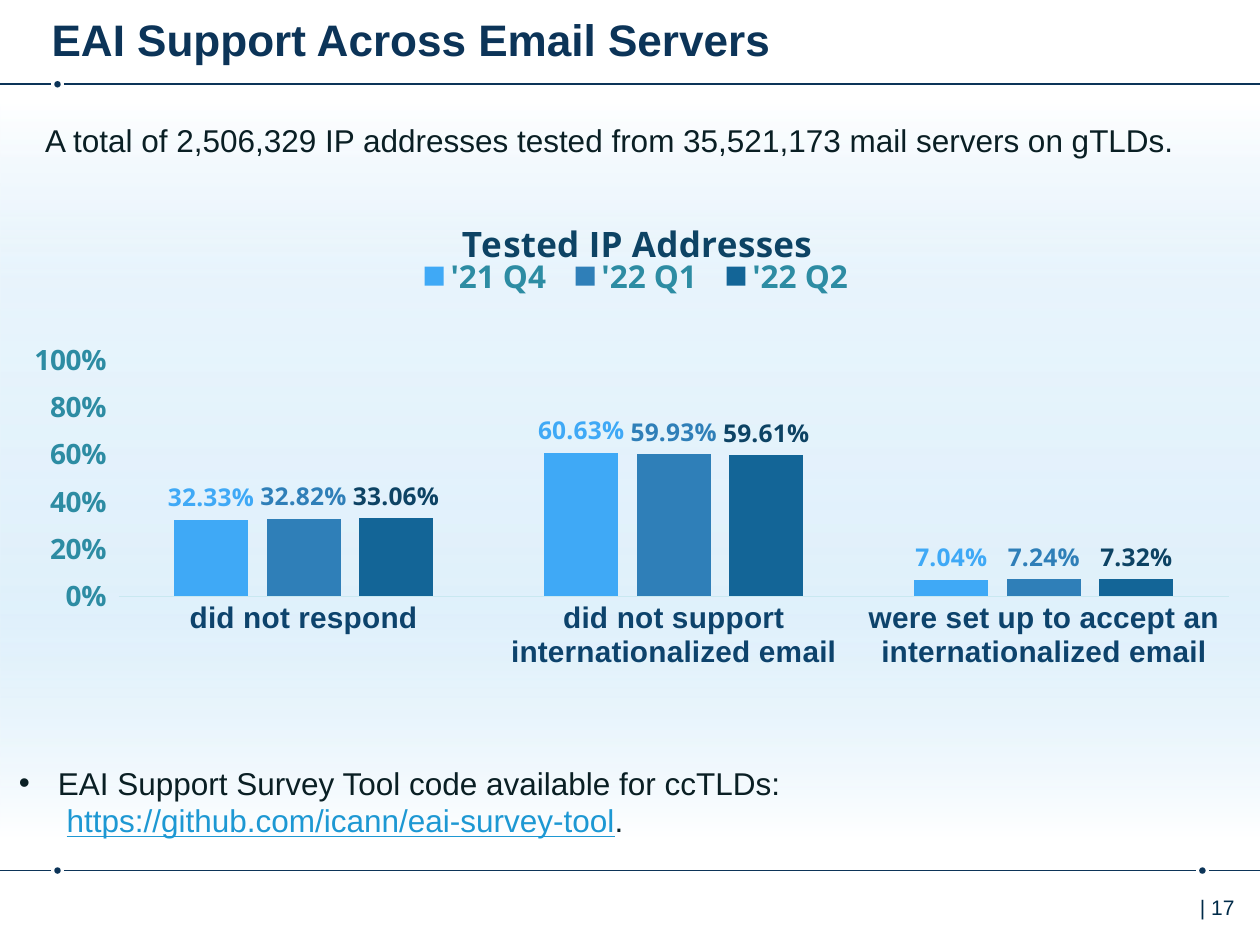
from lxml.etree import SubElement
from pptx import Presentation
from pptx.chart.data import CategoryChartData
from pptx.dml.color import RGBColor
from pptx.enum.chart import XL_CHART_TYPE as ChartType, XL_LABEL_POSITION as LabelPosition
from pptx.enum.chart import XL_LEGEND_POSITION as LegendPosition, XL_TICK_MARK as TickMark
from pptx.enum.shapes import MSO_CONNECTOR as Connector, MSO_SHAPE as Shape
from pptx.oxml import parse_xml
from pptx.oxml.ns import nsdecls, qn
from pptx.util import Cm, Pt

NAVY, INK, TITLE_BLUE, TEAL, LINK = "0C3458", "0A1F24", "0D4364", "2D8CA3", "1D98D3"
PAGE_WIDTH, PAGE_HEIGHT = 25.4, 19.05


def color(value):
    return RGBColor.from_string(value)


def set_font(font, size, value, bold=False, name="Arial"):
    font.name, font.size, font.bold = name, Pt(size), bold
    font.color.rgb = color(value)


def set_layout(element, **values):
    old = element.find(qn("c:layout"))
    if old is not None:
        element.remove(old)
    items = "".join(f'<c:{key} val="{value}"/>' for key, value in values.items())
    layout = parse_xml(f'<c:layout {nsdecls("c")}><c:manualLayout>{items}</c:manualLayout></c:layout>')
    anchor = {"title": "c:tx", "legend": "c:legendPos"}.get(element.tag.split("}")[1])
    if anchor:
        element.find(qn(anchor)).addnext(layout)
    else:
        element.insert(0, layout)


class SlideBuilder:
    """Draws styled elements on the current slide."""

    def __init__(self, slide):
        self.slide = slide
        self.shapes = slide.shapes

    def shape(self, kind, left, top, width, height, fill=None):
        shape = self.shapes.add_shape(kind, Cm(left), Cm(top), Cm(width), Cm(height))
        shape.shadow.inherit = False
        shape.line.fill.background()
        if fill:
            shape.fill.solid()
            shape.fill.fore_color.rgb = color(fill)
        return shape

    def gradient_panel(self, left, top, width, height, stops):
        shape = self.shape(Shape.RECTANGLE, left, top, width, height)
        items = "".join(
            f'<a:gs pos="{position * 1000}"><a:srgbClr val="{value}">'
            f'<a:alpha val="{alpha * 1000}"/></a:srgbClr></a:gs>'
            for position, value, alpha in stops)
        gradient = parse_xml(f'<a:gradFill {nsdecls("a")} rotWithShape="1"><a:gsLst>{items}</a:gsLst>'
                             '<a:lin ang="5400000" scaled="0"/></a:gradFill>')
        shape._element.spPr.find(qn("a:prstGeom")).addnext(gradient)

    def line(self, start, end, y):
        line = self.shapes.add_connector(Connector.STRAIGHT, Cm(start), Cm(y), Cm(end), Cm(y))
        line.line.color.rgb = color(NAVY)
        line.line.width = Pt(1)
        SubElement(line._element.spPr, qn("a:effectLst"))

    def dotted_rule(self, y, dots, size=0.13, gap=0.13):
        start = 0
        for dot in dots:
            self.line(start, dot - gap, y)
            self.shape(Shape.OVAL, dot - size / 2, y - size / 2, size, size, NAVY)
            start = dot + gap
        self.line(start, PAGE_WIDTH, y)

    def text(self, left, top, width, height, runs, size, bold=False, inset=0.25, bullet=None):
        frame = self.shapes.add_textbox(Cm(left), Cm(top), Cm(width), Cm(height)).text_frame
        frame.word_wrap = True
        frame.margin_left = frame.margin_right = Cm(inset)
        paragraph = frame.paragraphs[0]
        if bullet:
            properties = paragraph._p.get_or_add_pPr()
            properties.set("marL", str(Cm(0.79)))
            properties.set("indent", str(Cm(-0.79)))
            SubElement(properties, qn("a:buFont")).set("typeface", "Arial")
            SubElement(properties, qn("a:buChar")).set("char", bullet)
        for content, value in runs:
            if content == "\n":
                paragraph.add_line_break()
                continue
            run = paragraph.add_run()
            run.text = content
            set_font(run.font, size, value, bold)
            run.font.underline = value == LINK

    def column_chart(self, left, top, width, height, title, categories, series):
        data = CategoryChartData(number_format="0.00%")
        data.categories = categories
        for name, values, *_ in series:
            data.add_series(name, values)
        chart = self.shapes.add_chart(ChartType.COLUMN_CLUSTERED, Cm(left), Cm(top),
                                      Cm(width), Cm(height), data).chart
        set_font(chart.font, 10, INK)
        self.chart_title(chart, title)
        self.chart_legend(chart)
        self.chart_axes(chart)
        plot = chart.plots[0]
        plot.vary_by_categories = False
        plot.gap_width, plot.overlap = 150, -25
        for item, (_, _, fill, label) in zip(plot.series, series):
            item.invert_if_negative = False
            item.format.fill.solid()
            item.format.fill.fore_color.rgb = color(fill)
            labels = item.data_labels
            labels.show_value = True
            labels.number_format, labels.number_format_is_linked = "0.00%", False
            labels.position = LabelPosition.OUTSIDE_END
            set_font(labels.font, 14, label, True, "Open Sans")
        set_layout(chart._chartSpace.chart.plotArea, layoutTarget="inner", xMode="edge",
                   yMode="edge", x=0.09, y=0.34, w=0.89, h=0.44)

    def chart_title(self, chart, title):
        chart.has_title = True
        run = chart.chart_title.text_frame.paragraphs[0].add_run()
        run.text = title
        set_font(run.font, 20, TITLE_BLUE, True, "Open Sans")
        set_layout(chart.chart_title._element, xMode="edge", yMode="edge", x=0.36, y=0.06)

    def chart_legend(self, chart):
        chart.has_legend = True
        legend = chart.legend
        legend.position, legend.include_in_layout = LegendPosition.TOP, False
        set_font(legend.font, 18, TEAL, True, "Open Sans")
        set_layout(legend._element, xMode="edge", yMode="edge", x=0.32, y=0.14, w=0.37, h=0.09)

    def chart_axes(self, chart):
        category, value = chart.category_axis, chart.value_axis
        category.major_tick_mark = TickMark.NONE
        category.format.line.color.rgb = color("C9E8F0")
        category.format.line.width = Pt(0.75)
        set_font(category.tick_labels.font, 17, "0D436C", True)
        value.minimum_scale, value.maximum_scale, value.major_unit = 0, 1, 0.2
        value.has_major_gridlines = False
        value.format.line.fill.background()
        value.tick_labels.number_format = "0%"
        value.tick_labels.number_format_is_linked = False
        set_font(value.tick_labels.font, 16, TEAL, True, "Open Sans")


def main():
    presentation = Presentation()
    presentation.slide_width, presentation.slide_height = Cm(PAGE_WIDTH), Cm(PAGE_HEIGHT)
    builder = SlideBuilder(presentation.slides.add_slide(presentation.slide_layouts[6]))
    builder.dotted_rule(1.7, [1.16])
    builder.dotted_rule(17.55, [1.16, 24.24])
    builder.gradient_panel(0, 2.08, PAGE_WIDTH, 14.86, [
        (0, "FFFFFF", 75), (24, "CDE8F9", 45), (69, "CDE8F9", 62), (100, "FFFFFF", 100)])
    builder.text(23.94, 17.9, 1.4, 1, [("| 17", "002B49")], 12)
    builder.text(1.04, 0.13, 22.25, 1.25, [("EAI Support Across Email Servers", NAVY)],
                 25.2, bold=True, inset=0)
    builder.column_chart(
        0.13, 3.56, 25.15, 10.85, "Tested IP Addresses",
        ["did not respond", "did not support internationalized email",
         "were set up to accept an internationalized email"],
        [("'21 Q4", (0.3233, 0.6063, 0.0704), "3FA9F6", "3FA9F6"),
         ("'22 Q1", (0.3282, 0.5993, 0.0724), "2F7FB8", "2F7FB8"),
         ("'22 Q2", (0.3306, 0.5961, 0.0732), "136597", TITLE_BLUE)])
    builder.text(0.66, 2.31, 24.08, 1.02, [
        ("A total of 2,506,329 IP addresses tested from 35,521,173 mail servers on gTLDs.", INK)], 18)
    builder.text(0.13, 15.27, PAGE_WIDTH - 0.13, 1.8, [
        ("EAI Support Survey Tool code available for ccTLDs:", INK), ("\n", INK), (" ", INK),
        ("https://github.com/icann/eai-survey-tool", LINK), (".", INK)], 18, bullet="•")
    presentation.save("out.pptx")


if __name__ == "__main__":
    main()
